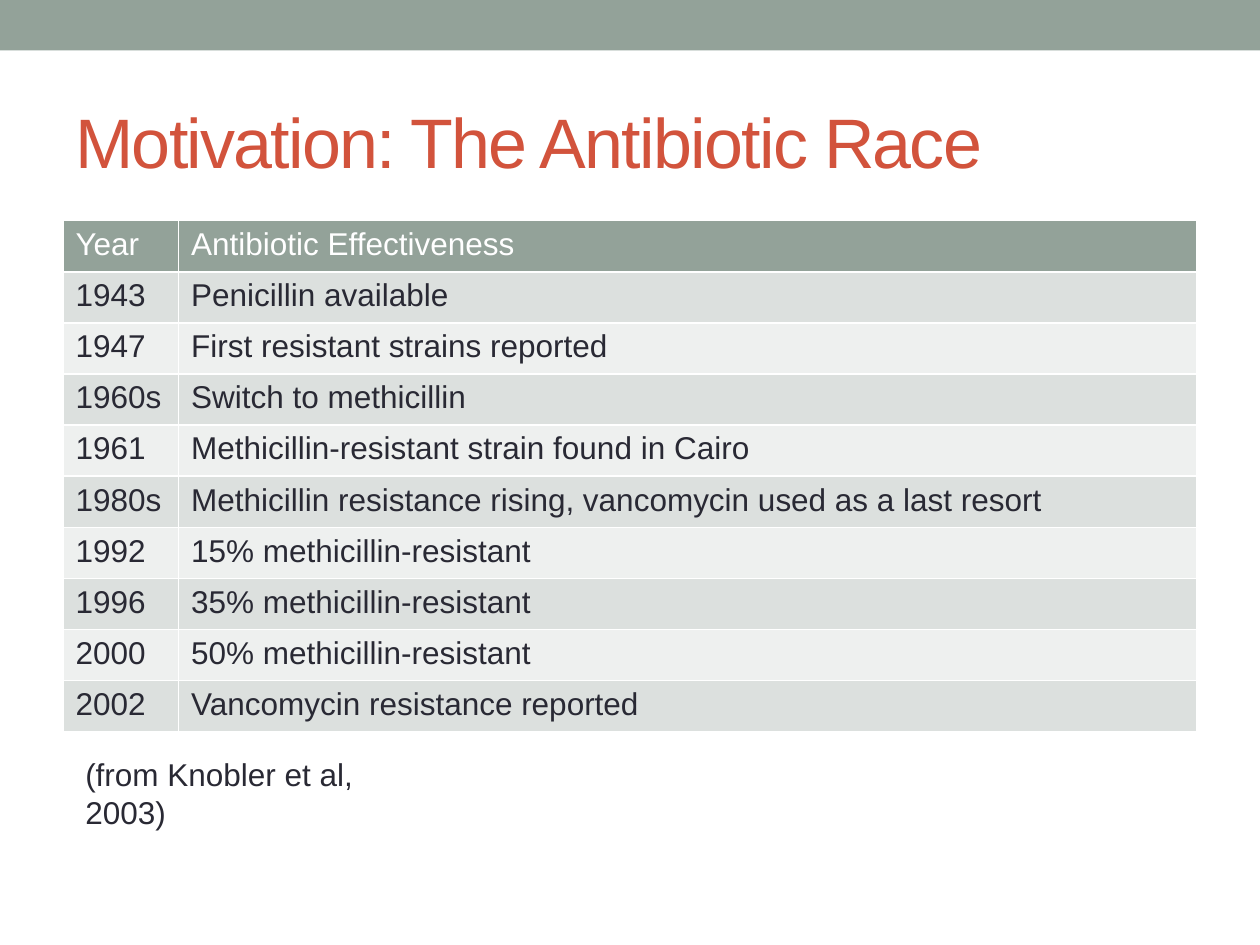
from lxml import etree
from pptx import Presentation
from pptx.dml.color import RGBColor
from pptx.enum.shapes import MSO_SHAPE
from pptx.enum.text import MSO_ANCHOR
from pptx.oxml.ns import qn
from pptx.util import Cm, Pt

RECTANGLE = MSO_SHAPE.RECTANGLE
TOP, MIDDLE = MSO_ANCHOR.TOP, MSO_ANCHOR.MIDDLE

COLORS = {
    "sage": "93A299",
    "title": "D2533C",
    "text": "292934",
    "white": "FFFFFF",
    "dark_band": "DCE0DE",
    "light_band": "EEF0EF",
}

TIMELINE = [
    ("Year", "Antibiotic Effectiveness"),
    ("1943", "Penicillin available"),
    ("1947", "First resistant strains reported"),
    ("1960s", "Switch to methicillin"),
    ("1961", "Methicillin-resistant strain found in Cairo"),
    ("1980s", "Methicillin resistance rising, vancomycin used as a last resort"),
    ("1992", "15% methicillin-resistant"),
    ("1996", "35% methicillin-resistant"),
    ("2000", "50% methicillin-resistant"),
    ("2002", "Vancomycin resistance reported"),
]


class SlideBuilder:
    def __init__(self, slide, font_name="Arial", body_size=18):
        self.slide = slide
        self.font_name = font_name
        self.body_size = body_size

    def color(self, name):
        return RGBColor.from_string(COLORS[name])

    def add_run(self, text_frame, text, color="text", size=None, spacing=None):
        """Put one run in the frame; spacing is between letters, in points."""
        run = text_frame.paragraphs[0].add_run()
        run.text = text
        formats = {"name": self.font_name, "size": Pt(size or self.body_size), "bold": False}
        for attribute, value in formats.items():
            setattr(run.font, attribute, value)
        run.font.color.rgb = self.color(color)
        if spacing is not None:
            run._r.get_or_add_rPr().set("spc", str(round(spacing * 100)))

    def band(self, left, top, width, height, color):
        shape = self.slide.shapes.add_shape(RECTANGLE, Cm(left), Cm(top), Cm(width), Cm(height))
        shape.shadow.inherit = False
        shape.fill.solid()
        shape.fill.fore_color.rgb = self.color(color)
        shape.line.fill.background()

    def text(self, left, top, width, height, text, anchor=TOP, **style):
        box = self.slide.shapes.add_textbox(Cm(left), Cm(top), Cm(width), Cm(height))
        for attribute, value in {"word_wrap": True, "vertical_anchor": anchor}.items():
            setattr(box.text_frame, attribute, value)
        self.add_run(box.text_frame, text, **style)

    def border(self, cell, color="white", width=1):
        properties = cell._tc.get_or_add_tcPr()
        for side in ("a:lnL", "a:lnR", "a:lnT", "a:lnB"):
            line = etree.SubElement(properties, qn(side), w=str(Pt(width)))
            fill = etree.SubElement(line, qn("a:solidFill"))
            etree.SubElement(fill, qn("a:srgbClr"), val=COLORS[color])

    def table(self, left, top, column_widths, row_height, rows):
        """Add a table with a sage header and alternating bands below it."""
        frame = self.slide.shapes.add_table(
            len(rows), len(column_widths), Cm(left), Cm(top),
            Cm(sum(column_widths)), Cm(row_height * len(rows)))
        table = frame.table
        for column, width in zip(table.columns, column_widths):
            column.width = Cm(width)
        for row_index, values in enumerate(rows):
            table.rows[row_index].height = Cm(row_height)
            if row_index == 0:
                fill, color = "sage", "white"
            else:
                fill, color = ("dark_band" if row_index % 2 else "light_band"), "text"
            for column_index, value in enumerate(values):
                cell = table.cell(row_index, column_index)
                self.border(cell)
                cell.fill.solid()
                cell.fill.fore_color.rgb = self.color(fill)
                self.add_run(cell.text_frame, value, color=color)


def main():
    presentation = Presentation()
    presentation.slide_width, presentation.slide_height = Cm(25.4), Cm(19.05)
    slide = presentation.slides.add_slide(presentation.slide_layouts[6])
    builder = SlideBuilder(slide)

    builder.band(0, 0, 25.4, 1.02, "sage")
    builder.text(1.27, 1.47, 22.86, 2.74, "Motivation: The Antibiotic Race",
                 anchor=MIDDLE, color="title", size=40, spacing=-1)
    builder.table(1.27, 4.45, (2.33, 20.53), 1.03, TIMELINE)
    builder.text(1.47, 15.09, 7.24, 1.02, "(from Knobler et al, 2003)")

    presentation.save("out.pptx")


if __name__ == "__main__":
    main()
